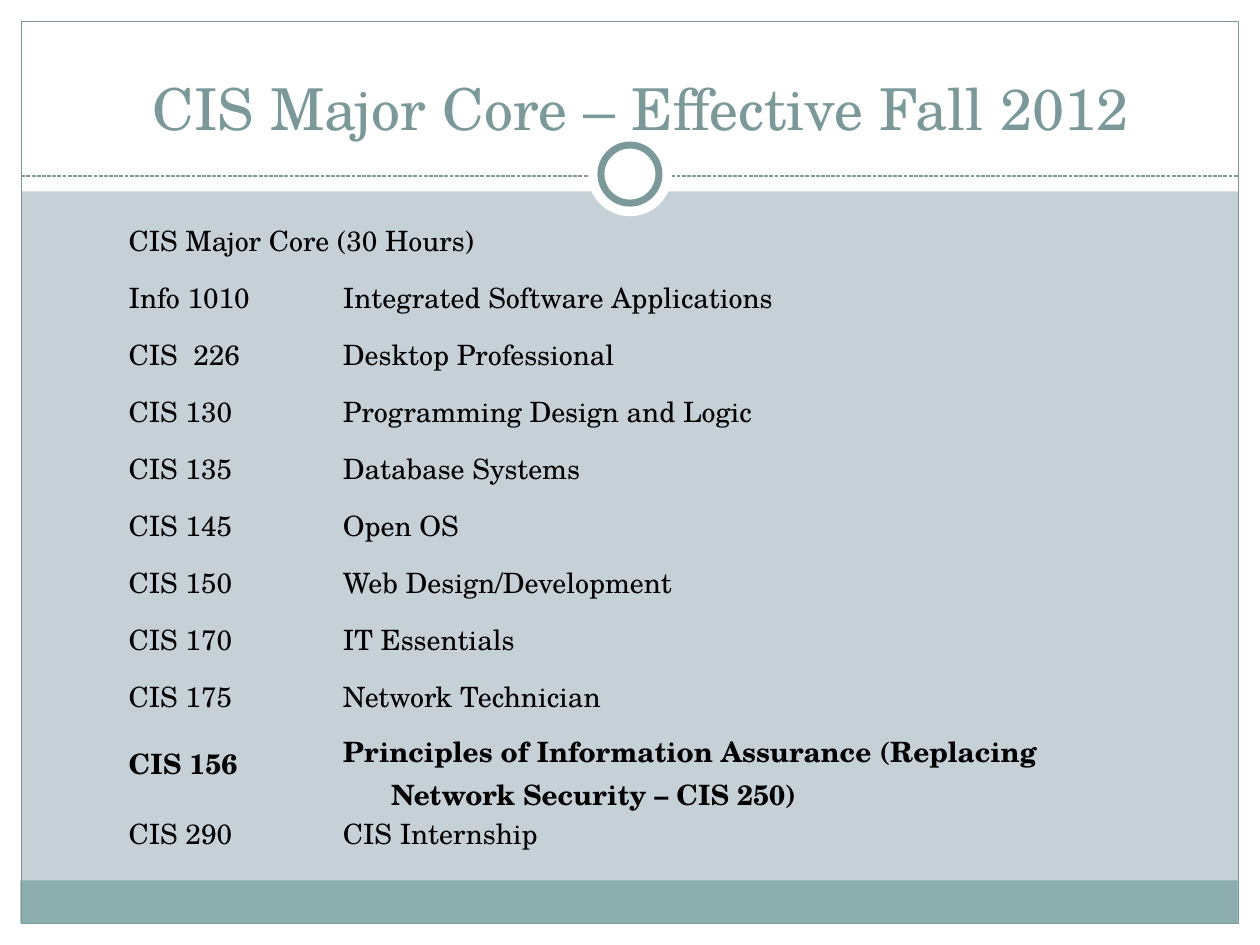
from lxml.etree import SubElement
from pptx import Presentation
from pptx.dml.color import RGBColor
from pptx.enum.dml import MSO_LINE
from pptx.enum.shapes import MSO_CONNECTOR, MSO_SHAPE
from pptx.enum.text import MSO_ANCHOR, PP_ALIGN
from pptx.oxml.ns import qn
from pptx.util import Cm, Pt

COLORS = {
    "background": "C5D1D7",
    "white": "FFFFFF",
    "band": "8CADAE",
    "accent": "7C999A",
    "text": "000000",
}
FONT = "TeX Gyre Schola"
NO_STYLE = "{2D5ABB26-0587-4C30-8999-92F81FD0307C}"
COURSES = [
    ("CIS Major Core (30 Hours)", ""),
    ("Info 1010", "Integrated Software Applications"),
    ("CIS  226", "Desktop Professional"),
    ("CIS 130", "Programming Design and Logic"),
    ("CIS 135", "Database Systems"),
    ("CIS 145", "Open OS"),
    ("CIS 150", "Web Design/Development"),
    ("CIS 170", "IT Essentials"),
    ("CIS 175", "Network Technician"),
    ("CIS 156", "Principles of Information Assurance (Replacing Network Security – CIS 250)"),
    ("CIS 290", "CIS Internship"),
]
NEW_COURSE = "CIS 156"


def color(name):
    return RGBColor.from_string(COLORS[name])


def format_font(font, size, color_name, bold=False):
    font.name = FONT
    font.size = Pt(size)
    font.bold = bold
    font.color.rgb = color(color_name)


presentation = Presentation()
presentation.slide_width = Cm(25.4)
presentation.slide_height = Cm(19.05)
slide = presentation.slides.add_slide(presentation.slide_layouts[6])
slide.background.fill.solid()
slide.background.fill.fore_color.rgb = color("background")

for left, top, width, height, fill in [
    (0, 18.62, 25.4, 0.43, "white"),
    (0, 0, 25.4, 3.86, "white"),
    (0, 0, 0.43, 19.05, "white"),
    (24.97, 0, 0.43, 19.05, "white"),
    (0.41, 17.75, 24.54, 0.87, "band"),
]:
    panel = slide.shapes.add_shape(
        MSO_SHAPE.RECTANGLE, Cm(left), Cm(top), Cm(width), Cm(height))
    panel.shadow.inherit = False
    panel.fill.solid()
    panel.fill.fore_color.rgb = color(fill)
    panel.line.fill.background()

frame = slide.shapes.add_shape(
    MSO_SHAPE.RECTANGLE, Cm(0.43), Cm(0.43), Cm(24.54), Cm(18.19))
frame.shadow.inherit = False
frame.fill.background()
frame.line.color.rgb = color("accent")
frame.line.width = Pt(0.75)

divider = slide.shapes.add_connector(
    MSO_CONNECTOR.STRAIGHT, Cm(0.43), Cm(3.55), Cm(24.97), Cm(3.55))
divider.line.color.rgb = color("accent")
divider.line.width = Pt(0.75)
divider.line.dash_style = MSO_LINE.SQUARE_DOT
SubElement(divider.element.spPr, qn("a:effectLst"))

for diameter, outlined in [(1.7, False), (1.17, True)]:
    circle = slide.shapes.add_shape(
        MSO_SHAPE.OVAL, Cm(12.7 - diameter / 2), Cm(3.51 - diameter / 2),
        Cm(diameter), Cm(diameter))
    circle.shadow.inherit = False
    circle.fill.solid()
    circle.fill.fore_color.rgb = color("white")
    if outlined:
        circle.line.color.rgb = color("accent")
        circle.line.width = Pt(4)
    else:
        circle.line.fill.background()

title = slide.shapes.add_textbox(Cm(1.27), Cm(0.69), Cm(23.29), Cm(2.29))
title.text_frame.word_wrap = True
title.text_frame.vertical_anchor = MSO_ANCHOR.BOTTOM
title.text_frame.text = "CIS Major Core – Effective Fall 2012"
heading = title.text_frame.paragraphs[0]
heading.alignment = PP_ALIGN.CENTER
format_font(heading.runs[0].font, 33, "accent")

table = slide.shapes.add_table(
    len(COURSES), 2, Cm(2.34), Cm(4.24), Cm(19.05), Cm(12.7)).table
table.first_row = False
table.horz_banding = False
table._tbl.tblPr.find(qn("a:tableStyleId")).text = NO_STYLE
table.columns[0].width = Cm(4.32)
table.columns[1].width = Cm(14.73)
table.cell(0, 0).merge(table.cell(0, 1))

for row, course in enumerate(COURSES):
    table.rows[row].height = Cm(1.15)
    is_new = course[0] == NEW_COURSE
    for column, text in enumerate(course):
        cell = table.cell(row, column)
        cell.fill.background()
        if not text:
            continue
        cell.text_frame.text = text
        centered = is_new and column == 0
        cell.vertical_anchor = MSO_ANCHOR.MIDDLE if centered else MSO_ANCHOR.BOTTOM
        paragraph = cell.text_frame.paragraphs[0]
        properties = paragraph._p.get_or_add_pPr()
        properties.set("marL", str(Cm(0.97)))
        properties.set("indent", str(Cm(-0.97)))
        format_font(paragraph.runs[0].font, 16, "text", is_new)

presentation.save("out.pptx")
